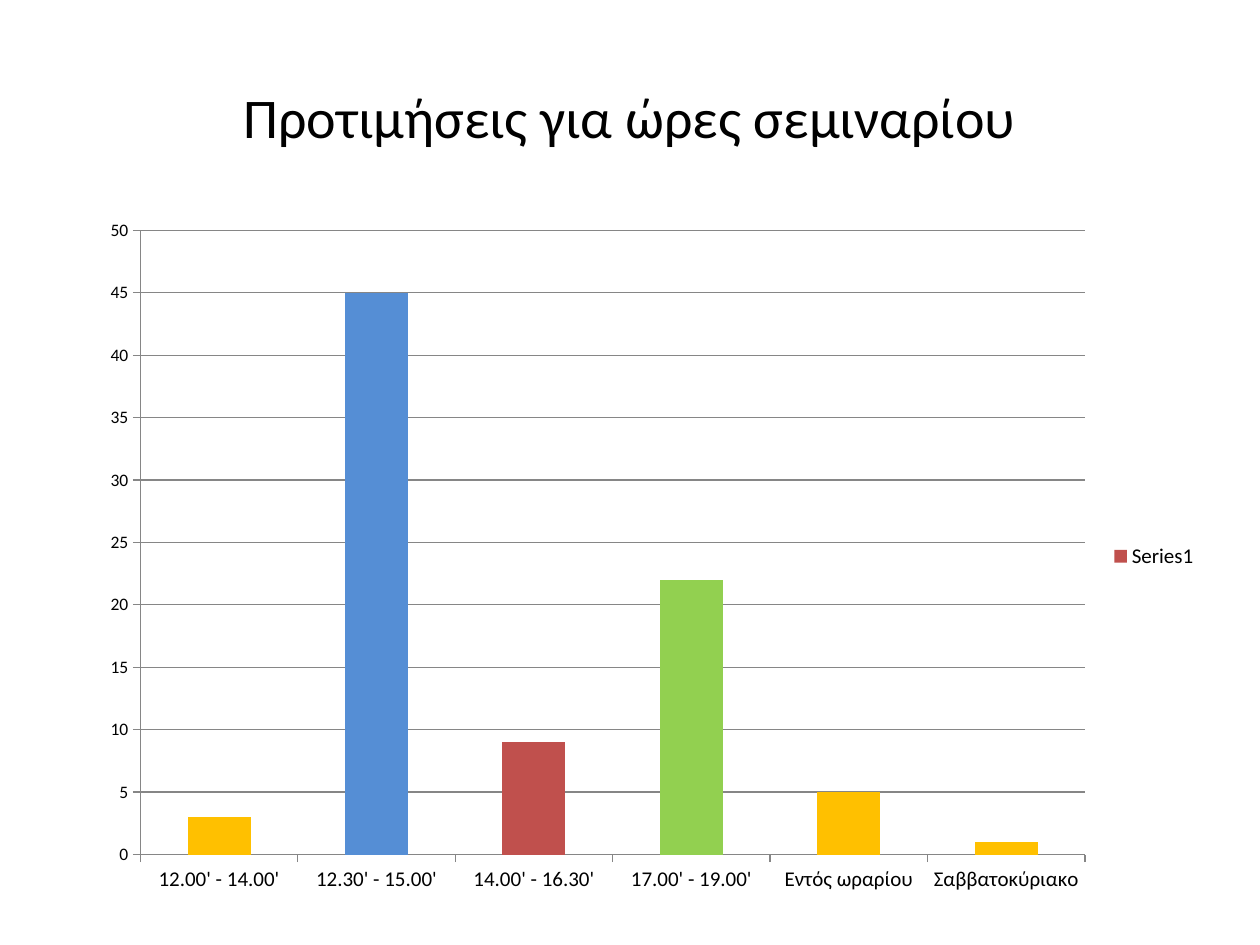
from pptx import Presentation
from pptx.chart.data import CategoryChartData
from pptx.dml.color import RGBColor
from pptx.enum.chart import XL_CHART_TYPE as ChartType, XL_LEGEND_POSITION as LegendPos, XL_TICK_MARK as Tick
from pptx.enum.text import MSO_ANCHOR as Anchor, PP_ALIGN as Align
from pptx.util import Inches, Pt


def rgb(value):
    return RGBColor.from_string(value)


class Deck:
    font = "Calibri"
    ink = "000000"
    axis = "868686"

    def __init__(self, prs):
        self.s = prs.slides.add_slide(prs.slide_layouts[5])

    def style(self, font, size):
        font.name = self.font
        font.size = Pt(size)
        font.color.rgb = rgb(self.ink)

    def line(self, fmt):
        fmt.line.color.rgb = rgb(self.axis)
        fmt.line.width = Pt(0.75)

    def title(self, text, x, y, w, h):
        sp = self.s.shapes.title
        sp.left, sp.top, sp.width, sp.height = map(Inches, (x, y, w, h))
        tf = sp.text_frame
        tf.text = text
        tf.word_wrap = True
        tf.vertical_anchor = Anchor.MIDDLE
        p = tf.paragraphs[0]
        p.alignment = Align.CENTER
        self.style(p.runs[0].font, 32)

    def columns(self, name, rows, color, x, y, w, h):
        data = CategoryChartData()
        data.categories = [label for label, _, _ in rows]
        data.add_series(name, [value for _, value, _ in rows])
        chart = self.s.shapes.add_chart(
            ChartType.COLUMN_CLUSTERED, *map(Inches, (x, y, w, h)), data).chart
        chart.has_title = False
        self.style(chart.font, 10)

        plot = chart.plots[0]
        plot.vary_by_categories = False
        plot.gap_width = 150
        series = plot.series[0]
        series.invert_if_negative = False
        series.format.fill.solid()
        series.format.fill.fore_color.rgb = rgb(color)
        for i, (_, _, point_color) in enumerate(rows):
            if point_color != color:
                fill = series.points[i].format.fill
                fill.solid()
                fill.fore_color.rgb = rgb(point_color)

        for axis, size in ((chart.category_axis, 12), (chart.value_axis, 10)):
            axis.major_tick_mark = Tick.OUTSIDE
            axis.minor_tick_mark = Tick.NONE
            self.line(axis.format)
            self.style(axis.tick_labels.font, size)
        chart.value_axis.minimum_scale = 0
        chart.value_axis.maximum_scale = 50
        chart.value_axis.major_unit = 5
        chart.value_axis.has_major_gridlines = True
        self.line(chart.value_axis.major_gridlines.format)

        chart.has_legend = True
        chart.legend.position = LegendPos.RIGHT
        chart.legend.include_in_layout = False
        self.style(chart.legend.font, 12)


def main():
    prs = Presentation()
    prs.slide_width, prs.slide_height = Inches(10), Inches(7.5)
    deck = Deck(prs)
    deck.title("Προτιμήσεις για ώρες σεμιναρίου", 0.5, 0.3, 9, 1.25)
    amber, blue, red, green = "FFC000", "558ED5", "C0504D", "92D050"
    hours = [
        ("12.00' - 14.00'", 3, amber),
        ("12.30' - 15.00'", 45, blue),
        ("14.00' - 16.30'", 9, red),
        ("17.00' - 19.00'", 22, green),
        ("Εντός ωραρίου", 5, amber),
        ("Σαββατοκύριακο", 1, amber),
    ]
    deck.columns("Series1", hours, red, 0.7, 1.64, 8.91, 5.55)
    prs.save("out.pptx")


if __name__ == "__main__":
    main()
